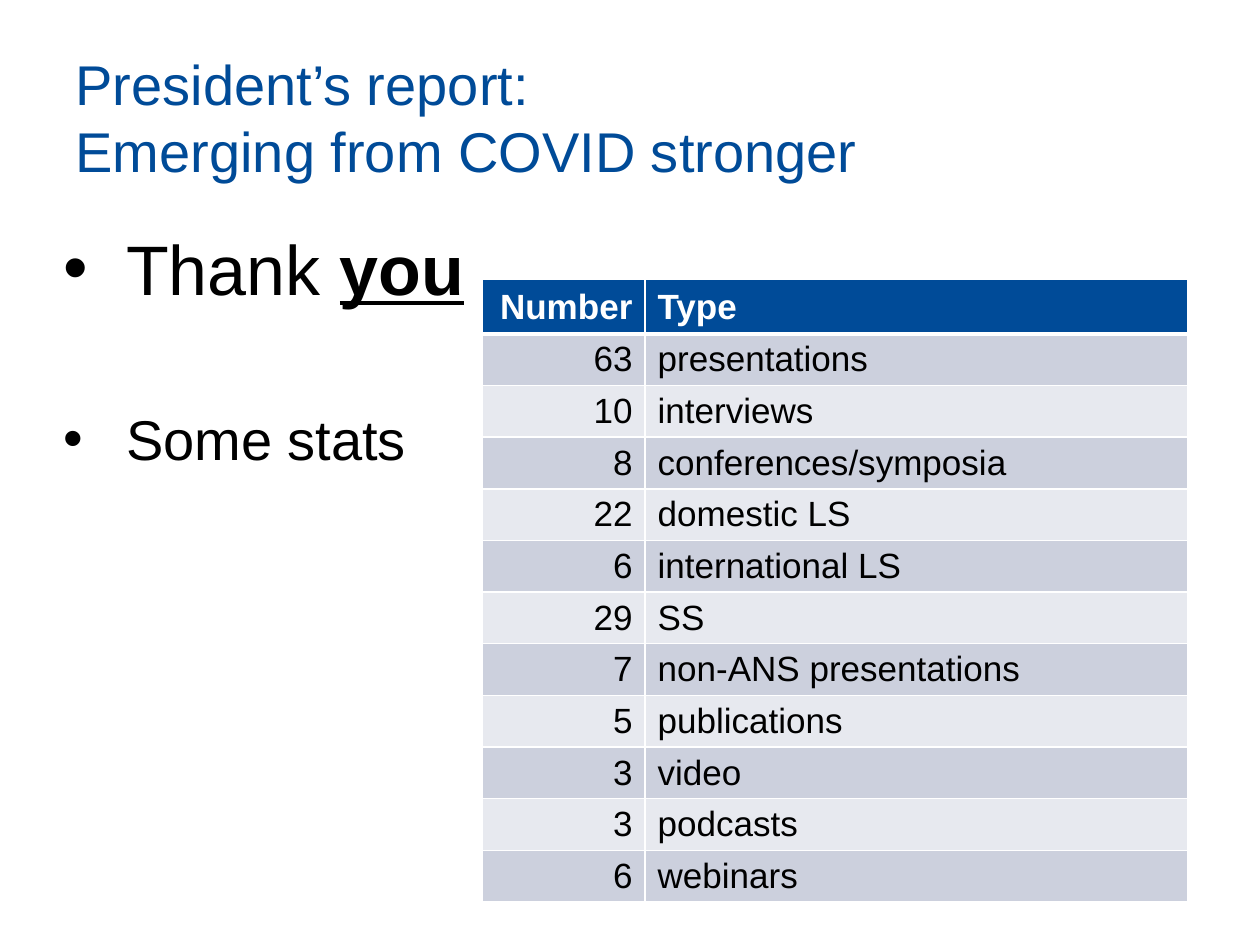
from dataclasses import dataclass

from lxml import etree
from pptx import Presentation
from pptx.dml.color import RGBColor
from pptx.enum.text import MSO_ANCHOR, MSO_AUTO_SIZE, PP_ALIGN
from pptx.oxml.ns import qn
from pptx.util import Inches, Pt

LEFT, RIGHT = PP_ALIGN.LEFT, PP_ALIGN.RIGHT
TOP, MIDDLE = MSO_ANCHOR.TOP, MSO_ANCHOR.MIDDLE
FIXED = MSO_AUTO_SIZE.NONE


@dataclass(frozen=True)
class Theme:
    font: str = "Arial"
    blue: str = "004B98"
    black: str = "000000"
    white: str = "FFFFFF"
    bands: tuple = ("CCD0DD", "E7E9EF")
    big: int = 40
    head: int = 32
    cell: int = 20


THEME = Theme()
TITLE = "President’s report:\vEmerging from COVID stronger"
# Each bullet: type size, space before, runs with their formats
BULLETS = [
    (THEME.big, 0, [("Thank ", {}), ("you", {"bold": True, "underline": True})]),
    (THEME.head, 54, [("Some stats", {})]),
]
HEADS = ("Number", "Type")
STATS = [
    (63, "presentations"),
    (10, "interviews"),
    (8, "conferences/symposia"),
    (22, "domestic LS"),
    (6, "international LS"),
    (29, "SS"),
    (7, "non-ANS presentations"),
    (5, "publications"),
    (3, "video"),
    (3, "podcasts"),
    (6, "webinars"),
]
WIDTHS = (1.29, 4.31)
HEAD_H, ROW_H = 0.43, 0.41


def style(item, **values):
    for name, value in values.items():
        setattr(item, name, value)


def ink(font, size, color, **more):
    style(font, name=THEME.font, size=Pt(size), **more)
    font.color.rgb = RGBColor.from_string(color)


def place(shape, left, top, width, height):
    style(shape, left=Inches(left), top=Inches(top),
          width=Inches(width), height=Inches(height))


def add_title(slide):
    title = slide.shapes.title
    place(title, 0.5, 0.3, 9, 1.25)
    frame = title.text_frame
    style(frame, text=TITLE, vertical_anchor=MIDDLE, auto_size=FIXED)
    para = frame.paragraphs[0]
    para.alignment = LEFT
    for run in para.runs:
        ink(run.font, THEME.head, THEME.blue)


def add_bullet(para, size, gap, parts):
    props = para._p.get_or_add_pPr()
    props.set("marL", str(Inches(0.5)))
    props.set("indent", str(Inches(-0.5)))
    etree.SubElement(props, qn("a:buChar")).set("char", "•")
    para.space_before = Pt(gap)
    for text, look in parts:
        run = para.add_run()
        run.text = text
        ink(run.font, size, THEME.black, **look)


def add_body(slide):
    body = slide.placeholders[1]
    place(body, 0.4, 1.69, 8.75, 4.77)
    frame = body.text_frame
    style(frame, vertical_anchor=TOP, auto_size=FIXED, margin_top=Inches(0.1))
    for i, bullet in enumerate(BULLETS):
        para = frame.add_paragraph() if i else frame.paragraphs[0]
        add_bullet(para, *bullet)


def add_edges(cell, row):
    # The rule under the heading row is thicker than the others
    thick = {"T": 3 if row == 1 else 1, "B": 3 if row == 0 else 1}
    props = cell._tc.get_or_add_tcPr()
    for side in "LRTB":
        line = etree.SubElement(props, qn(f"a:ln{side}"))
        line.set("w", str(Pt(thick.get(side, 1))))
        fill = etree.SubElement(line, qn("a:solidFill"))
        etree.SubElement(fill, qn("a:srgbClr")).set("val", THEME.white)


def fill_cell(cell, row, col, text):
    head = row == 0
    add_edges(cell, row)
    cell.fill.solid()
    back = THEME.blue if head else THEME.bands[(row - 1) % 2]
    cell.fill.fore_color.rgb = RGBColor.from_string(back)
    style(cell, text=str(text), vertical_anchor=MIDDLE,
          margin_top=Inches(0.04), margin_bottom=Inches(0.04))
    para = cell.text_frame.paragraphs[0]
    para.alignment = LEFT if col else RIGHT
    ink(para.runs[0].font, THEME.cell,
        THEME.white if head else THEME.black, bold=head)


def add_stats(slide):
    rows = [HEADS, *STATS]
    high = HEAD_H + ROW_H * len(STATS)
    table = slide.shapes.add_table(
        len(rows), len(HEADS), Inches(3.83), Inches(2.22),
        Inches(sum(WIDTHS)), Inches(high)).table
    for col, width in zip(table.columns, WIDTHS):
        col.width = Inches(width)
    for r, texts in enumerate(rows):
        table.rows[r].height = Inches(ROW_H if r else HEAD_H)
        for c, text in enumerate(texts):
            fill_cell(table.cell(r, c), r, c, text)


def main():
    deck = Presentation()
    style(deck, slide_width=Inches(10), slide_height=Inches(7.5))
    slide = deck.slides.add_slide(deck.slide_layouts[1])
    # Title and list
    add_title(slide)
    add_body(slide)
    # Table of outreach counts
    add_stats(slide)
    deck.save("out.pptx")


if __name__ == "__main__":
    main()
